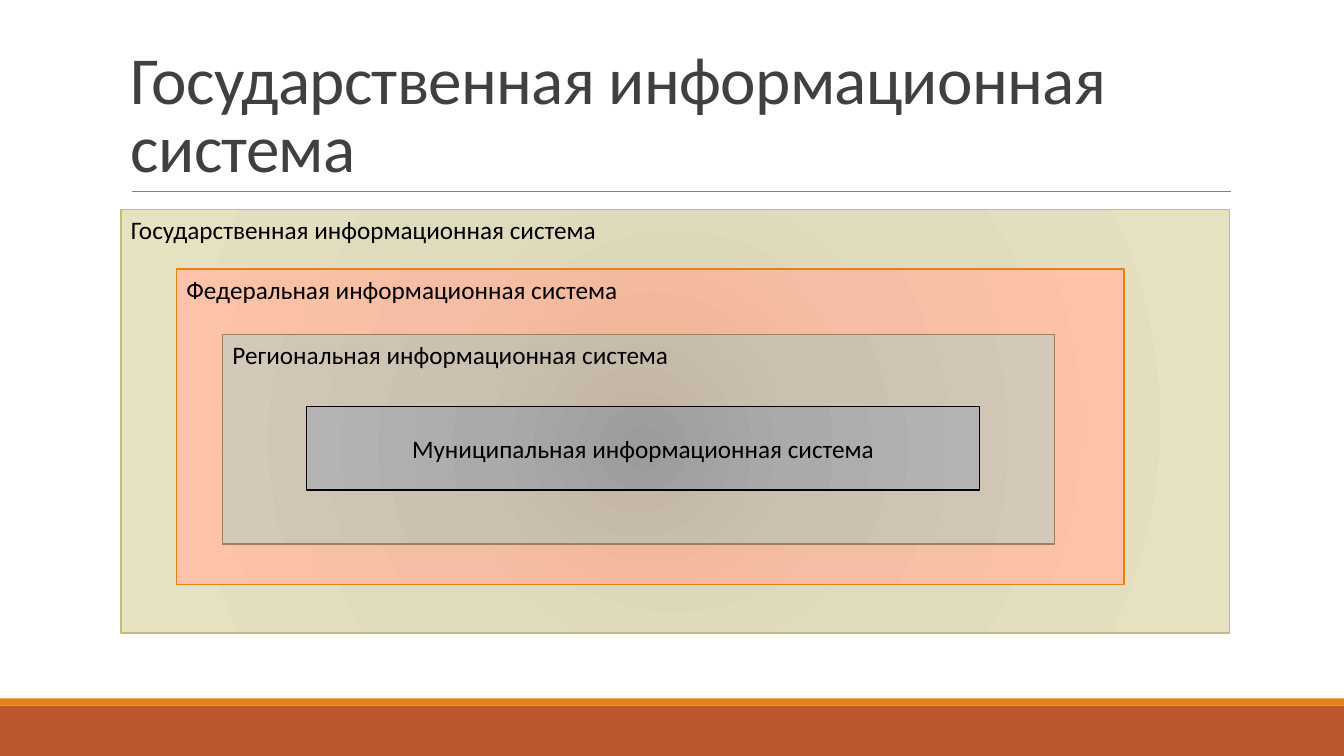
from dataclasses import dataclass
from lxml.etree import SubElement
from pptx import Presentation
from pptx.dml.color import RGBColor
from pptx.enum.shapes import MSO_CONNECTOR, MSO_SHAPE
from pptx.enum.text import MSO_ANCHOR, PP_ALIGN
from pptx.oxml.ns import qn
from pptx.util import Cm, Pt


@dataclass(frozen=True)
class Theme:
    font: str = "Calibri"
    head: int = 48
    body: int = 18
    title: str = "404040"
    text: str = "000000"
    rule: str = "808080"
    band: str = "BD582C"
    strip: str = "E48312"
    # Line colour, then gradient from centre to edge
    state: tuple = ("C2BC80", "D7D3AF", "DFDBBD", "E5E1C1")
    federal: tuple = ("E48312", "F0B191", "F5BEA4", "FDC3A8")
    region: tuple = ("9B8357", "C2B5A2", "CCC1B1", "D4C8B8")
    city: tuple = ("000000", "9C9C9C", "AAAAAA", "B4B4B4")


theme = Theme()
deck = Presentation()
deck.slide_width, deck.slide_height = Cm(33.87), Cm(19.05)
slide = deck.slides.add_slide(deck.slide_layouts[6])


def add_box(left, top, width, height):
    box = slide.shapes.add_shape(
        MSO_SHAPE.RECTANGLE, Cm(left), Cm(top), Cm(width), Cm(height))
    box.shadow.inherit = False
    return box


def set_text(shape, text, size, color, anchor, align):
    frame = shape.text_frame
    frame.word_wrap = True
    frame.vertical_anchor = anchor
    frame.text = text
    line = frame.paragraphs[0]
    line.alignment = align
    font = line.runs[0].font
    font.name, font.size = theme.font, Pt(size)
    font.color.rgb = RGBColor.from_string(color)
    return line


# Footer bands
for top, height, color in ((17.78, 1.27, theme.band), (17.6, 0.18, theme.strip)):
    band = add_box(0, top, 33.87, height)
    band.fill.solid()
    band.fill.fore_color.rgb = RGBColor.from_string(color)
    band.line.fill.background()

# Rule under the title
rule = slide.shapes.add_connector(
    MSO_CONNECTOR.STRAIGHT, Cm(3.33), Cm(4.83), Cm(31.01), Cm(4.83))
rule.line.color.rgb = RGBColor.from_string(theme.rule)
rule.line.width = Pt(0.5)
SubElement(rule._element.spPr, qn("a:effectLst"))

# Title
title = slide.shapes.add_textbox(Cm(3.05), Cm(0.79), Cm(27.94), Cm(4.04))
line = set_text(title, "Государственная информационная система",
                theme.head, theme.title, MSO_ANCHOR.BOTTOM, PP_ALIGN.LEFT)
line.line_spacing = 0.85
line.runs[0].font._element.set("spc", "-50")

# Nested systems, from the widest to the narrowest
high = (MSO_ANCHOR.TOP, PP_ALIGN.LEFT)
mid = (MSO_ANCHOR.MIDDLE, PP_ALIGN.CENTER)
levels = (
    ("Государственная", (3.05, 5.28, 27.94, 10.67), theme.state, high),
    ("Федеральная", (4.45, 6.78, 23.88, 7.95), theme.federal, high),
    ("Региональная", (5.61, 8.43, 20.96, 5.28), theme.region, high),
    ("Муниципальная", (7.72, 10.24, 16.97, 2.11), theme.city, mid),
)
for name, place, (edge, *tints), (anchor, align) in levels:
    box = add_box(*place)
    box.line.color.rgb = RGBColor.from_string(edge)
    box.line.width = Pt(1)
    set_text(box, f"{name} информационная система",
             theme.body, theme.text, anchor, align)

    # Radial gradient
    box.fill.gradient()
    grad = box._element.spPr.find(qn("a:gradFill"))
    for part in list(grad):
        grad.remove(part)
    stops = SubElement(grad, qn("a:gsLst"))
    for pos, tint in zip((0, 45, 100), tints):
        stop = SubElement(stops, qn("a:gs"), pos=str(pos * 1000))
        SubElement(stop, qn("a:srgbClr"), val=tint)
    shade = SubElement(grad, qn("a:path"), path="circle")
    SubElement(shade, qn("a:fillToRect"), dict.fromkeys("ltrb", "100000"))

deck.save("out.pptx")
